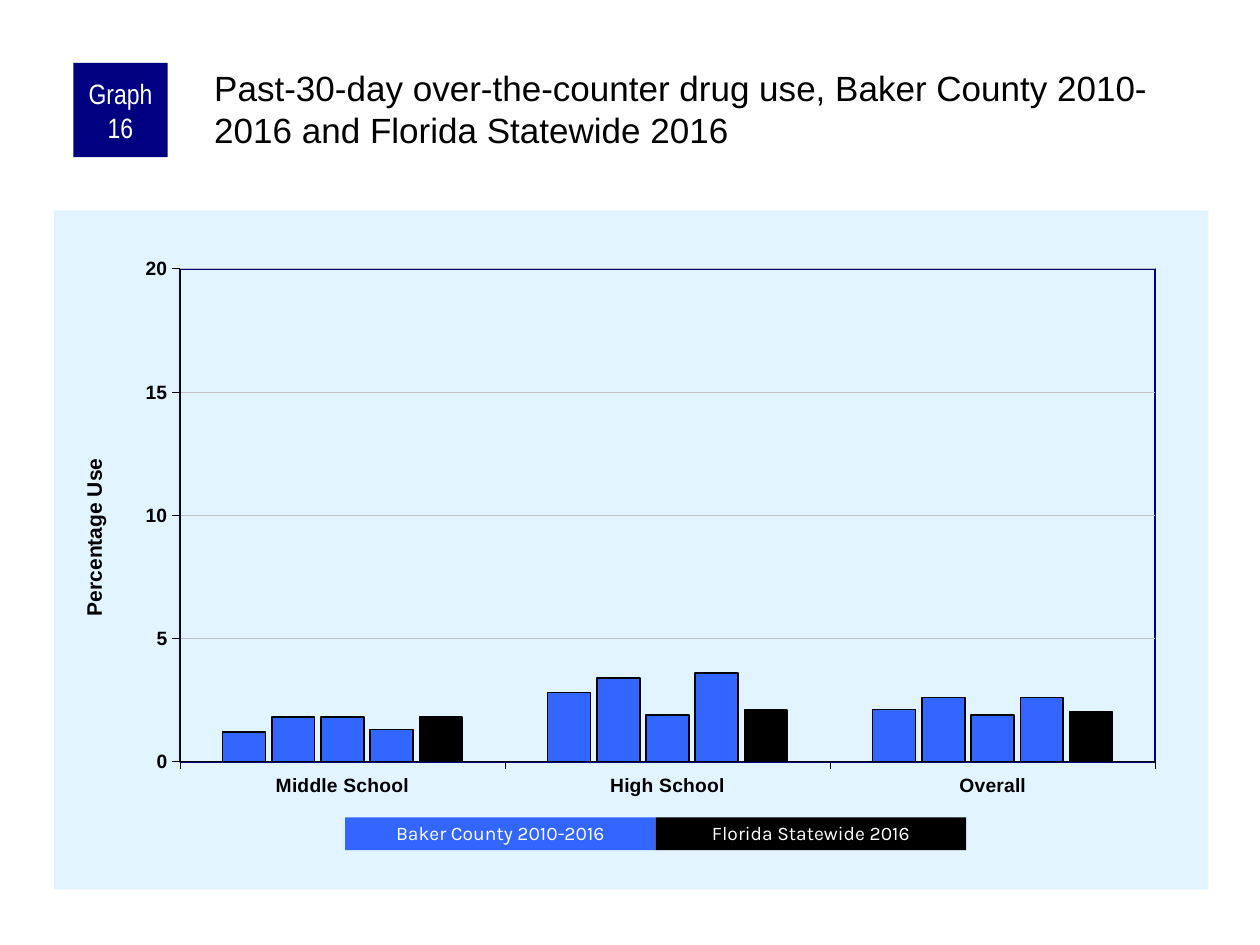
import pptx
import pptx.chart.data
import pptx.dml.color
import pptx.enum.chart
import pptx.enum.shapes
import pptx.enum.text
import pptx.oxml
import pptx.oxml.ns
import pptx.util
from dataclasses import dataclass

Cm, Pt = pptx.util.Cm, pptx.util.Pt
CENTER = pptx.enum.text.PP_ALIGN.CENTER
LEFT = pptx.enum.text.PP_ALIGN.LEFT
qn = pptx.oxml.ns.qn


@dataclass(frozen=True)
class Theme:
    ink: str = "000000"
    white: str = "FFFFFF"
    navy: str = "000080"
    blue: str = "3366FF"
    panel: str = "E1F4FF"
    grid: str = "C0C0C0"
    body_font: str = "Arial"
    badge_font: str = "Arial Narrow"
    legend_font: str = "Karla"
    title_size: float = 20
    badge_size: float = 16
    axis_title_size: float = 12
    label_size: float = 11


def rgb(value):
    return pptx.dml.color.RGBColor.from_string(value)


def style_font(font, name, size, color, bold=False):
    font.name, font.size, font.bold = name, Pt(size), bold
    font.color.rgb = rgb(color)


def style_line(line, color, width):
    line.color.rgb = rgb(color)
    line.width = Pt(width)


def chart_xml(content):
    return pptx.oxml.parse_xml(content.replace(">", f" {pptx.oxml.ns.nsdecls('c', 'a')}>", 1))


def chart_layout(modes, **fractions):
    """Manual layout element for a part of a chart."""
    values = "".join(f'<c:{key} val="{value}"/>' for key, value in fractions.items())
    return chart_xml(f"<c:layout><c:manualLayout>{modes}{values}</c:manualLayout></c:layout>")


def set_layout(parent, layout, index):
    for old in parent.findall(qn("c:layout")):
        parent.remove(old)
    parent.insert(index, layout)


class SlideBuilder:
    EDGE_MODES = '<c:xMode val="edge"/><c:yMode val="edge"/>'

    def __init__(self, page, theme):
        self.page, self.theme = page, theme

    def fill_text(self, frame, text, font, size, color, align):
        frame.word_wrap = True
        frame.text = text
        para = frame.paragraphs[0]
        para.alignment = align
        style_font(para.runs[0].font, font, size, color)
        return para

    def block(self, text, left, top, width, height, fill, font, size, spacing=1.0):
        """Filled rectangle with centred white text."""
        box = self.page.shapes.add_shape(
            pptx.enum.shapes.MSO_SHAPE.RECTANGLE, Cm(left), Cm(top), Cm(width), Cm(height))
        box.shadow.inherit = False
        box.fill.solid()
        box.fill.fore_color.rgb = rgb(fill)
        box.line.fill.background()
        frame = box.text_frame
        frame.margin_left = frame.margin_right = Cm(0.13)
        frame.margin_top = frame.margin_bottom = 0
        frame.vertical_anchor = pptx.enum.text.MSO_ANCHOR.MIDDLE
        para = self.fill_text(frame, text, font, size, self.theme.white, CENTER)
        para.line_spacing = spacing

    def title(self, text, left, top, width, height):
        box = self.page.shapes.add_textbox(Cm(left), Cm(top), Cm(width), Cm(height))
        frame = box.text_frame
        frame.margin_left = frame.margin_top = Cm(0.08)
        frame.margin_right = frame.margin_bottom = 0
        self.fill_text(frame, text, self.theme.body_font, self.theme.title_size,
                       self.theme.ink, LEFT)

    def axis(self, axis):
        axis.major_tick_mark = pptx.enum.chart.XL_TICK_MARK.OUTSIDE
        axis.minor_tick_mark = pptx.enum.chart.XL_TICK_MARK.NONE
        style_line(axis.format.line, self.theme.ink, 0.25)
        style_font(axis.tick_labels.font, self.theme.body_font, self.theme.label_size,
                   self.theme.ink, bold=True)

    def column_chart(self, categories, series, axis_title, left, top, width, height):
        """Clustered columns; series holds (name, values, colour, line width)."""
        theme = self.theme
        data = pptx.chart.data.CategoryChartData()
        data.categories = categories
        for name, values, *_ in series:
            data.add_series(name, values)
        chart = self.page.shapes.add_chart(
            pptx.enum.chart.XL_CHART_TYPE.COLUMN_CLUSTERED,
            Cm(left), Cm(top), Cm(width), Cm(height), data).chart
        chart.has_title = chart.has_legend = False
        style_font(chart.font, theme.body_font, 8, theme.ink)

        # Columns
        plot = chart.plots[0]
        plot.gap_width, plot.overlap, plot.vary_by_categories = 200, -15, False
        for column, (_, _, color, line_width) in zip(plot.series, series):
            column.format.fill.solid()
            column.format.fill.fore_color.rgb = rgb(color)
            style_line(column.format.line, theme.ink, line_width)

        # Axes
        self.axis(chart.category_axis)
        scale = chart.value_axis
        self.axis(scale)
        scale.minimum_scale, scale.maximum_scale, scale.major_unit = 0, 20, 5
        scale.tick_labels.number_format = "0"
        scale.tick_labels.number_format_is_linked = False
        scale.has_major_gridlines = True
        style_line(scale.major_gridlines.format.line, theme.grid, 0.25)
        heading = scale.axis_title
        heading.text_frame.text = axis_title
        style_font(heading.text_frame.paragraphs[0].runs[0].font, theme.body_font,
                   theme.axis_title_size, theme.ink, bold=True)
        body = heading.text_frame._txBody.find(qn("a:bodyPr"))
        body.set("rot", "-5400000")
        body.set("vert", "horz")

        # Placement, panel fill and plot border
        title_xml = scale._element.find(qn("c:title"))
        set_layout(title_xml, chart_layout(self.EDGE_MODES, x=0.02, y=0.36), 1)
        space = chart._chartSpace
        area = space.find(qn("c:chart")).find(qn("c:plotArea"))
        set_layout(area, chart_layout('<c:layoutTarget val="inner"/>' + self.EDGE_MODES,
                                      x=0.109, y=0.086, w=0.845, h=0.726), 0)
        area.append(chart_xml(
            '<c:spPr><a:noFill/><a:ln w="12700"><a:solidFill>'
            f'<a:srgbClr val="{theme.navy}"/></a:solidFill></a:ln></c:spPr>'))
        space.find(qn("c:chart")).addnext(chart_xml(
            f'<c:spPr><a:solidFill><a:srgbClr val="{theme.panel}"/></a:solidFill>'
            '<a:ln><a:noFill/></a:ln></c:spPr>'))


def main():
    theme = Theme()
    deck = pptx.Presentation()
    deck.slide_width, deck.slide_height = Cm(25.4), Cm(19.05)
    builder = SlideBuilder(deck.slides.add_slide(deck.slide_layouts[6]), theme)

    # Chart
    values = [(1.2, 2.8, 2.1), (1.8, 3.4, 2.6), (1.8, 1.9, 1.9), (1.3, 3.6, 2.6), (1.8, 2.1, 2)]
    colors = [theme.blue] * 4 + [theme.ink]
    widths = [0.75] + [1] * 4
    series = [(f"Series {number}", *parts)
              for number, parts in enumerate(zip(values, colors, widths), 1)]
    builder.column_chart(["Middle School", "High School", "Overall"], series,
                         "Percentage Use", 1.09, 4.24, 23.27, 13.69)

    # Heading
    builder.block("Graph 16", 1.48, 1.27, 1.9, 1.9, theme.navy,
                  theme.badge_font, theme.badge_size)
    builder.title("Past-30-day over-the-counter drug use, Baker County 2010-2016 "
                  "and Florida Statewide 2016", 4.24, 1.27, 20.12, 2.11)

    # Legend
    legend = [("Baker County 2010-2016", theme.blue), ("Florida Statewide 2016", theme.ink)]
    key_width = 6.26
    for index, (label, color) in enumerate(legend):
        builder.block(label, 6.96 + index * key_width, 16.48, key_width, 0.66, color,
                      theme.legend_font, theme.label_size, spacing=0.9)

    deck.save("out.pptx")


if __name__ == "__main__":
    main()
